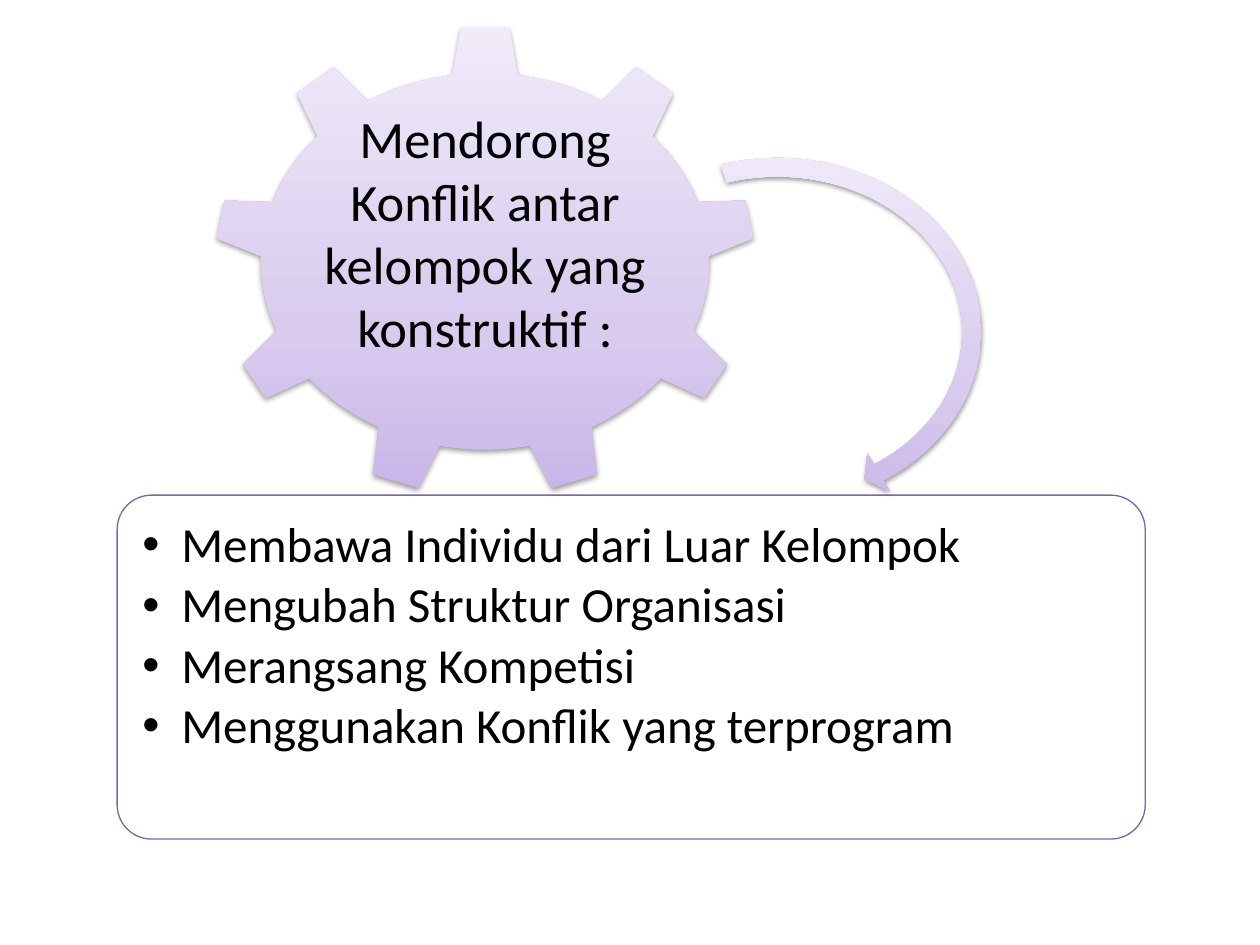
from lxml.etree import SubElement
from pptx import Presentation
from pptx.dml.color import RGBColor
from pptx.enum.shapes import MSO_SHAPE
from pptx.enum.text import MSO_ANCHOR, PP_ALIGN
from pptx.oxml import parse_xml
from pptx.oxml.ns import nsdecls, qn
from pptx.util import Inches, Pt

# Content
TITLE = "Mendorong Konflik antar kelompok yang konstruktif :"
POINTS = [
    "Membawa Individu dari Luar Kelompok",
    "Mengubah Struktur Organisasi",
    "Merangsang Kompetisi",
    "Menggunakan Konflik yang terprogram",
]

# Layout in inches: left, top, width, height
W, H = 10, 7.5
GEAR = (1.7, 0.21, 4.3, 3.73)
GEAR_TEXT = (2.52, 1.08, 2.66, 1.92)
PANEL = (0.93, 3.93, 8.16, 2.73)
ARROW = (4.45, 1.15, 3.44, 2.97)
PAD = 0.08
ARROW_ADJ = (0.05, 3.13, 32.52, 150.79, 0.06)
INK, WHITE, PURPLE = "000000", "FFFFFF", "8064A2"
LILAC = [(0, "C9B5E8"), (35, "D8CBEE"), (100, "F0EAF9")]


def rgb(color):
    return RGBColor.from_string(color)


def add_shape(s, kind, box, adj=()):
    sp = s.shapes.add_shape(kind, *map(Inches, box))
    sp.shadow.inherit = False
    for i, value in enumerate(adj):
        sp.adjustments[i] = value
    return sp


def style_lilac(sp):
    """Vertical lilac gradient, no outline, soft shadow below."""
    sp.line.fill.background()
    stops = "".join(
        f'<a:gs pos="{pos * 1000}"><a:srgbClr val="{c}"/></a:gs>' for pos, c in LILAC)
    sp._element.spPr.find(qn("a:prstGeom")).addnext(parse_xml(
        f'<a:gradFill {nsdecls("a")} rotWithShape="1"><a:gsLst>{stops}</a:gsLst>'
        '<a:lin ang="16200000" scaled="1"/></a:gradFill>'))
    effects = sp._element.spPr.find(qn("a:effectLst"))
    shadow = SubElement(effects, qn("a:outerShdw"), blurRad=str(Pt(3.1)),
                        dist=str(Pt(1.6)), dir="5400000", rotWithShape="0")
    color = SubElement(shadow, qn("a:srgbClr"), val=INK)
    SubElement(color, qn("a:alpha"), val="38000")


def add_text(s, box, lines, size, inset, bottom=None):
    tf = s.shapes.add_textbox(*map(Inches, box)).text_frame
    tf.word_wrap = True
    tf.margin_left = tf.margin_top = tf.margin_right = Inches(inset)
    tf.margin_bottom = Inches(bottom or inset)
    tf.text = "\n".join(lines)
    for p in tf.paragraphs:
        font = p.runs[0].font
        font.name, font.size = "Calibri", Pt(size)
        font.color.rgb = rgb(INK)
    return tf


prs = Presentation()
prs.slide_width, prs.slide_height = Inches(W), Inches(H)
s = prs.slides.add_slide(prs.slide_layouts[6])

# Gear with the heading, held above its middle by the bottom margin
style_lilac(add_shape(s, MSO_SHAPE.GEAR_9, GEAR))
tf = add_text(s, GEAR_TEXT, [TITLE], 30, 0.04, bottom=0.44)
tf.vertical_anchor = MSO_ANCHOR.MIDDLE
tf.paragraphs[0].alignment = PP_ALIGN.CENTER

# Panel with the bullet list
panel = add_shape(s, MSO_SHAPE.ROUNDED_RECTANGLE, PANEL, [0.1])
panel.fill.solid()
panel.fill.fore_color.rgb = rgb(WHITE)
SubElement(panel._element.spPr.find(qn("a:solidFill"))[0], qn("a:alpha"), val="90000")
panel.line.color.rgb = rgb(PURPLE)
panel.line.width = Pt(0.75)

x, y, w, h = PANEL
tf = add_text(s, (x + PAD, y + PAD, w - 2 * PAD, h - 2 * PAD), POINTS, 28, 0.12)
for p in tf.paragraphs:
    p.line_spacing = 0.9
    p.space_after = Pt(4.2)
    pPr = p._p.get_or_add_pPr()
    pPr.set("marL", str(Inches(0.31)))
    pPr.set("indent", str(-Inches(0.31)))
    SubElement(pPr, qn("a:buFont"), typeface="Arial")
    SubElement(pPr, qn("a:buChar"), char="•")

# Curved arrow from gear to panel
style_lilac(add_shape(s, MSO_SHAPE.CIRCULAR_ARROW, ARROW, ARROW_ADJ))

prs.save("out.pptx")
